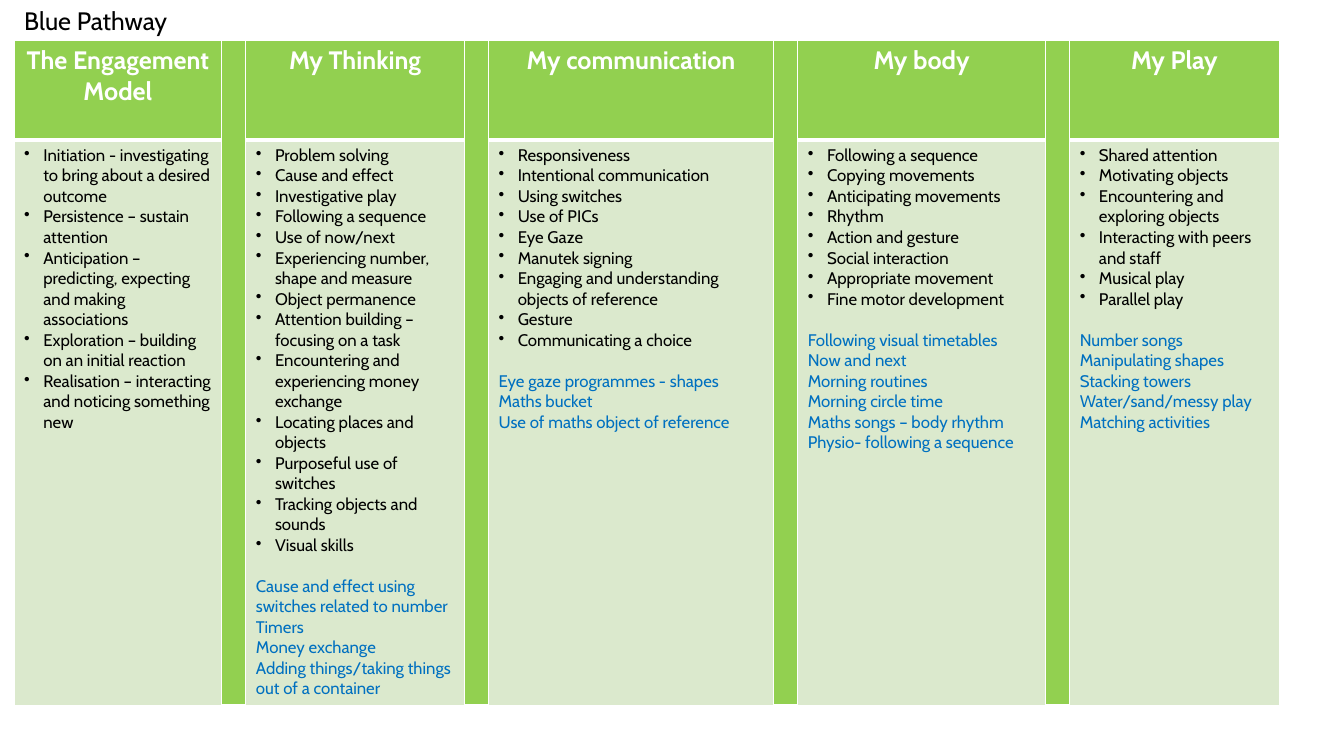
from lxml import etree
from pptx import Presentation
from pptx.dml.color import RGBColor
from pptx.enum.text import MSO_ANCHOR, PP_ALIGN
from pptx.oxml.ns import qn
from pptx.util import Inches, Pt

CENTER, LEFT = PP_ALIGN.CENTER, PP_ALIGN.LEFT
TOP = MSO_ANCHOR.TOP
FONT = "Cabin"
COLORS = {
    "header": "92D050",
    "body": "DBE9CD",
    "border": "FFFFFF",
    "heading": "FFFFFF",
    "skill": "000000",
    "activity": "0070C0",
}
SLIDE_WIDTH, SLIDE_HEIGHT = 13.33, 7.5
TITLE_BOX = (0.14, 0, 5.26, 0.4)
TABLE_BOX = (0.14, 0.4, 12.51, 6.6)
# Row and column weights, shared out over the table box
ROW_WEIGHTS = (0.99, 5.61)
SPACER_WEIGHT = 0.23
BULLET_INDENT = Inches(0.19)
ACTIVITY_GAP = Pt(14.6)

# Heading, column weight, skills, activities
AREAS = [
    ("The Engagement Model", 2.06, [
        "Initiation - investigating to bring about a desired outcome",
        "Persistence – sustain attention",
        "Anticipation – predicting, expecting and making associations",
        "Exploration – building on an initial reaction",
        "Realisation – interacting and noticing something new",
    ], []),
    ("My Thinking", 2.17, [
        "Problem solving",
        "Cause and effect",
        "Investigative play",
        "Following a sequence",
        "Use of now/next",
        "Experiencing number, shape and measure",
        "Object permanence",
        "Attention building – focusing on a task",
        "Encountering and experiencing money exchange",
        "Locating places and objects",
        "Purposeful use of switches",
        "Tracking objects and sounds",
        "Visual skills",
    ], [
        "Cause and effect using switches related to number",
        "Timers",
        "Money exchange",
        "Adding things/taking things out of a container",
    ]),
    ("My communication", 2.83, [
        "Responsiveness",
        "Intentional communication",
        "Using switches",
        "Use of PICs",
        "Eye Gaze",
        "Manutek signing",
        "Engaging and understanding objects of reference",
        "Gesture",
        "Communicating a choice",
    ], [
        "Eye gaze programmes - shapes",
        "Maths bucket",
        "Use of maths object of reference",
    ]),
    ("My body", 2.46, [
        "Following a sequence",
        "Copying movements",
        "Anticipating movements",
        "Rhythm",
        "Action and gesture",
        "Social interaction",
        "Appropriate movement",
        "Fine motor development",
    ], [
        "Following visual timetables",
        "Now and next",
        "Morning routines",
        "Morning circle time",
        "Maths songs – body rhythm",
        "Physio- following a sequence",
    ]),
    ("My Play", 2.08, [
        "Shared attention",
        "Motivating objects",
        "Encountering and exploring objects",
        "Interacting with peers and staff",
        "Musical play",
        "Parallel play",
    ], [
        "Number songs",
        "Manipulating shapes",
        "Stacking towers",
        "Water/sand/messy play",
        "Matching activities",
    ]),
]


def rgb(name):
    return RGBColor.from_string(COLORS[name])


def write_paragraph(paragraph, text, size, color, bold=False, align=LEFT):
    paragraph.text = text
    paragraph.alignment = align
    font = paragraph.font
    font.name, font.size, font.bold = FONT, Pt(size), bold
    font.color.rgb = rgb(color)


def add_bullet(paragraph):
    properties = paragraph._p.get_or_add_pPr()
    properties.set("marL", str(BULLET_INDENT))
    properties.set("indent", str(-BULLET_INDENT))
    bullet = etree.Element(qn("a:buChar"), char="•")
    # The bullet stands before the default run properties
    properties.insert(0, bullet)


def style_cell(cell, fill, bottom_width=1):
    properties = cell._tc.get_or_add_tcPr()
    for side, width in (("L", 1), ("R", 1), ("T", 1), ("B", bottom_width)):
        line = etree.SubElement(properties, qn(f"a:ln{side}"), w=str(Pt(width)))
        solid = etree.SubElement(line, qn("a:solidFill"))
        etree.SubElement(solid, qn("a:srgbClr"), val=COLORS["border"])
    cell.fill.solid()
    cell.fill.fore_color.rgb = rgb(fill)


def fill_area_body(cell, skills, activities):
    frame = cell.text_frame
    for index, text in enumerate(skills + activities):
        paragraph = frame.add_paragraph() if index else frame.paragraphs[0]
        is_skill = index < len(skills)
        write_paragraph(paragraph, text, 12, "skill" if is_skill else "activity")
        if is_skill:
            add_bullet(paragraph)
        elif index == len(skills):
            paragraph.space_before = ACTIVITY_GAP


def add_title(slide, box):
    title = slide.shapes.title
    title.left, title.top, title.width, title.height = map(Inches, box)
    frame = title.text_frame
    frame.word_wrap = True
    frame.vertical_anchor = TOP
    write_paragraph(frame.paragraphs[0], "Blue Pathway", 18, "skill")


def add_pathway_table(slide, box):
    left, top, width, height = box
    weights = [SPACER_WEIGHT] * (2 * len(AREAS) - 1)
    weights[::2] = [area[1] for area in AREAS]
    table = slide.shapes.add_table(
        len(ROW_WEIGHTS), len(weights), *map(Inches, box)).table
    for column, weight in zip(table.columns, weights):
        column.width = Inches(width * weight / sum(weights))
    for row, weight in zip(table.rows, ROW_WEIGHTS):
        row.height = Inches(height * weight / sum(ROW_WEIGHTS))

    # Areas of learning
    for index, (heading, _, skills, activities) in enumerate(AREAS):
        header, body = (table.cell(row, 2 * index) for row in range(2))
        style_cell(header, "header", bottom_width=3)
        style_cell(body, "body")
        write_paragraph(header.text_frame.paragraphs[0], heading, 18,
                        "heading", bold=True, align=CENTER)
        fill_area_body(body, skills, activities)

    # Spacer columns between the areas
    for column in range(1, len(weights), 2):
        spacer = table.cell(0, column)
        spacer.merge(table.cell(1, column))
        style_cell(spacer, "header", bottom_width=3)


def main():
    presentation = Presentation()
    presentation.slide_width = Inches(SLIDE_WIDTH)
    presentation.slide_height = Inches(SLIDE_HEIGHT)
    slide = presentation.slides.add_slide(presentation.slide_layouts[5])
    add_pathway_table(slide, TABLE_BOX)
    add_title(slide, TITLE_BOX)
    presentation.save("out.pptx")


if __name__ == "__main__":
    main()
